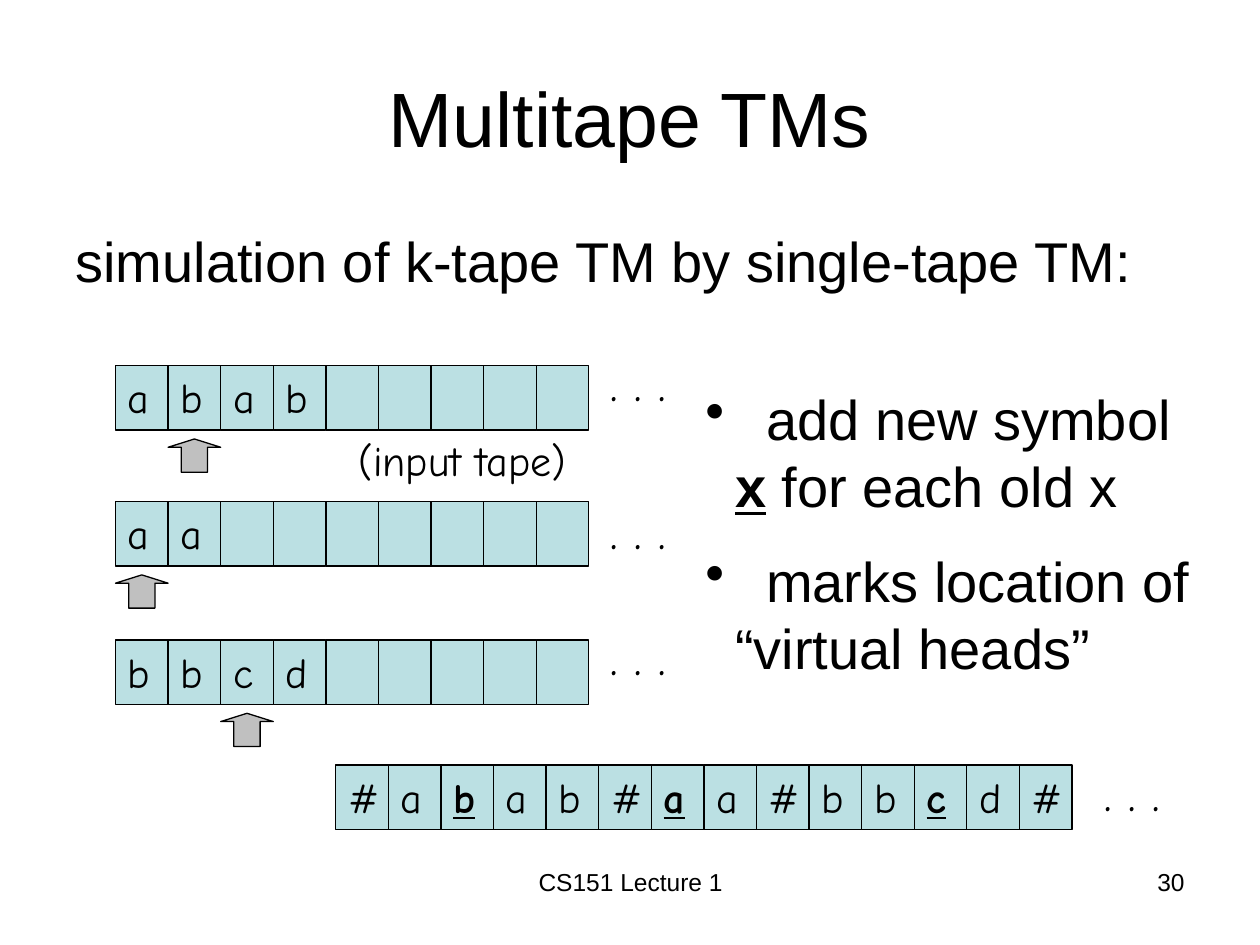
import pptx
import pptx.util
from lxml import etree
from pptx.dml.color import RGBColor
from pptx.enum.shapes import MSO_SHAPE
from pptx.enum.text import MSO_ANCHOR, PP_ALIGN
from pptx.oxml.ns import qn
from pptx.util import Cm

BLACK = RGBColor(0x00, 0x00, 0x00)
WHITE = RGBColor(0xFF, 0xFF, 0xFF)
TAPE_BLUE = RGBColor(0xBB, 0xE0, 0xE3)
HEAD_GRAY = RGBColor(0xC0, 0xC0, 0xC0)

SANS = "Arial"
HAND = "Comic Neue"

CELL_WIDTH = 1.06
CELL_HEIGHT = 1.3
TAPE_LEFT = 2.33
TAPE_LENGTH = 9


class TapeSlide:
    """Draws text and Turing machine tapes; all lengths are in centimetres."""

    def __init__(self, presentation):
        self.slide = presentation.slides.add_slide(presentation.slide_layouts[6])
        self.slide.background.fill.solid()
        self.slide.background.fill.fore_color.rgb = WHITE

    def style(self, paragraph, size, font, align=PP_ALIGN.LEFT):
        paragraph.alignment = align
        paragraph.font.size = pptx.util.Pt(size)
        paragraph.font.name = font
        paragraph.font.color.rgb = BLACK

    def text(self, text, left, top, width, height, size, font=SANS,
             align=PP_ALIGN.LEFT, anchor=MSO_ANCHOR.TOP):
        box = self.slide.shapes.add_textbox(Cm(left), Cm(top), Cm(width), Cm(height))
        frame = box.text_frame
        frame.word_wrap = True
        frame.vertical_anchor = anchor
        frame.text = text
        self.style(frame.paragraphs[0], size, font, align)
        return frame

    def bullets(self, items, left, top, width, height, size):
        """Each item is a list of (text, emphasized) pairs."""
        frame = self.text("", left, top, width, height, size)
        for index, item in enumerate(items):
            paragraph = frame.add_paragraph() if index else frame.paragraphs[0]
            self.style(paragraph, size, SANS)
            paragraph.space_before = pptx.util.Pt(16 if index else 0)
            properties = paragraph._p.get_or_add_pPr()
            properties.set("marL", str(Cm(0.6)))
            properties.set("indent", str(Cm(-0.6)))
            bullet = etree.Element(qn("a:buChar"), char="•")
            properties.find(qn("a:defRPr")).addprevious(bullet)
            for text, emphasized in item:
                run = paragraph.add_run()
                run.text = text
                if emphasized:
                    run.font.bold = run.font.underline = True

    def shape(self, kind, left, top, width, height, color):
        shape = self.slide.shapes.add_shape(kind, Cm(left), Cm(top), Cm(width), Cm(height))
        shape.shadow.inherit = False
        shape.fill.solid()
        shape.fill.fore_color.rgb = color
        shape.line.color.rgb = BLACK
        shape.line.width = pptx.util.Pt(0.75)
        return shape

    def tape(self, symbols, left, top, length, marked=()):
        """A row of cells; marked positions are bold and underlined."""
        for index, symbol in enumerate(symbols.ljust(length)):
            cell = self.shape(MSO_SHAPE.RECTANGLE, left + index * CELL_WIDTH, top,
                              CELL_WIDTH, CELL_HEIGHT, TAPE_BLUE)
            if symbol == " ":
                continue
            frame = cell.text_frame
            frame.vertical_anchor = MSO_ANCHOR.TOP
            frame.text = symbol
            paragraph = frame.paragraphs[0]
            self.style(paragraph, 24, HAND)
            if index in marked:
                paragraph.font.bold = paragraph.font.underline = True

    def head(self, position, left, tape_top):
        arrow = self.shape(MSO_SHAPE.UP_ARROW, left + position * CELL_WIDTH,
                           tape_top + 1.48, CELL_WIDTH, 0.67, HEAD_GRAY)
        arrow.adjustments[0] = 0.5
        arrow.adjustments[1] = 0.25

    def ellipsis(self, left, top):
        self.text(". . .", left, top, 2.33, 1.45, 28, HAND)


def main():
    presentation = pptx.Presentation()
    presentation.slide_width = Cm(25.4)
    presentation.slide_height = Cm(19.05)
    page = TapeSlide(presentation)

    # Title and statement
    page.text("Multitape TMs", 1.27, 0.76, 22.86, 3.18, 44,
              align=PP_ALIGN.CENTER, anchor=MSO_ANCHOR.MIDDLE)
    page.text("simulation of k-tape TM by single-tape TM:", 1.27, 4.45, 22.86, 1.9, 32)

    # The k tapes: symbols, head position, top, top of the dots
    for symbols, position, top, dots_top in (
        ("abab", 1, 7.37, 6.98),
        ("aa", 0, 10.11, 9.96),
        ("bbcd", 2, 12.9, 12.5),
    ):
        page.tape(symbols, TAPE_LEFT, top, TAPE_LENGTH)
        page.head(position, TAPE_LEFT, top)
        page.ellipsis(12.06, dots_top)
    page.text("(input tape)", 6.98, 8.64, 6.56, 1.27, 24, HAND)

    # The single tape, with virtual heads marked
    single = "#abab#aa#bbcd#"
    page.tape(single, 6.77, 15.42, len(single), marked=(2, 6, 11))
    page.ellipsis(22.02, 15.24)

    # Explanation
    page.bullets(
        [
            [("  add new symbol ", False), ("x", True), (" for each old x", False)],
            [("  marks location of “virtual heads”", False)],
        ],
        13.97, 7.62, 10.37, 6.35, 32)

    # Footer
    page.text("CS151 Lecture 1", 8.69, 17.35, 8.05, 1.32, 14, align=PP_ALIGN.CENTER)
    page.text("30", 18.21, 17.35, 5.92, 1.32, 14, align=PP_ALIGN.RIGHT)

    presentation.save("out.pptx")


if __name__ == "__main__":
    main()
